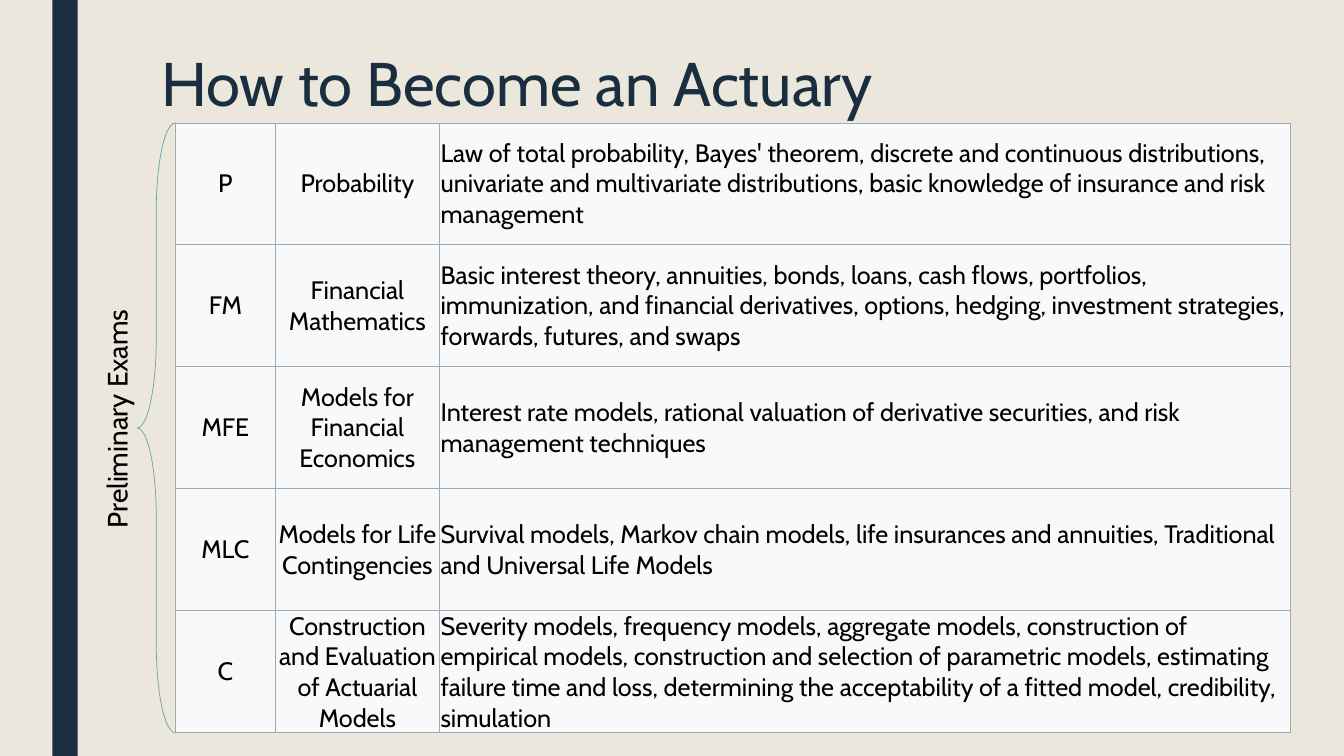
from dataclasses import dataclass

from lxml import etree
from pptx import Presentation
from pptx.dml.color import RGBColor
from pptx.enum.shapes import MSO_SHAPE
from pptx.enum.text import MSO_ANCHOR, PP_ALIGN
from pptx.oxml.ns import qn
from pptx.util import Inches, Pt

RECTANGLE = MSO_SHAPE.RECTANGLE
LEFT_BRACE = MSO_SHAPE.LEFT_BRACE
LEFT, CENTER = PP_ALIGN.LEFT, PP_ALIGN.CENTER
TOP, MIDDLE = MSO_ANCHOR.TOP, MSO_ANCHOR.MIDDLE


@dataclass(frozen=True)
class Theme:
    font: str = "Cabin"
    background: str = "EBE7DD"
    navy: str = "1A2E40"
    black: str = "000000"
    cell: str = "F8F9FA"
    border: str = "A2A9B1"
    brace: str = "69A1AB"
    title_size: int = 44
    label_size: int = 20
    cell_size: int = 18
    border_width: float = 0.75
    brace_width: float = 0.5


THEME = Theme()

TABLE_LEFT, TABLE_TOP = 1.74, 1.22
COLUMN_WIDTHS = (0.99, 1.63, 8.44)
COLUMN_ALIGNMENTS = (CENTER, CENTER, LEFT)
ROW_HEIGHT = 1.21
EXAMS = (
    ("P", "Probability",
     "Law of total probability, Bayes' theorem, discrete and continuous distributions, "
     "univariate and multivariate distributions, basic knowledge of insurance and risk management"),
    ("FM", "Financial Mathematics",
     "Basic interest theory, annuities, bonds, loans, cash flows, portfolios, immunization, "
     "and financial derivatives, options, hedging, investment strategies, forwards, futures, and swaps"),
    ("MFE", "Models for Financial Economics",
     "Interest rate models, rational valuation of derivative securities, and risk management techniques"),
    ("MLC", "Models for Life Contingencies",
     "Survival models, Markov chain models, life insurances and annuities, "
     "Traditional and Universal Life Models"),
    ("C", "Construction and Evaluation of Actuarial Models",
     "Severity models, frequency models, aggregate models, construction of empirical models, "
     "construction and selection of parametric models, estimating failure time and loss, "
     "determining the acceptability of a fitted model, credibility, simulation"),
)
TABLE_HEIGHT = ROW_HEIGHT * len(EXAMS)


def color(value):
    return RGBColor.from_string(value)


def write_text(frame, text, *, size, ink=THEME.black, align=LEFT, spacing=None):
    para = frame.paragraphs[0]
    para.alignment = align
    if spacing:
        para.line_spacing = spacing
    span = para.add_run()
    span.text = text
    span.font.name = THEME.font
    span.font.size = Pt(size)
    span.font.color.rgb = color(ink)


def add_text_box(page, text, left, top, width, height, *, rotation=0, **text_format):
    box = page.shapes.add_textbox(Inches(left), Inches(top), Inches(width), Inches(height))
    box.rotation = rotation
    box.text_frame.word_wrap = True
    box.text_frame.vertical_anchor = TOP
    write_text(box.text_frame, text, **text_format)


def add_side_bar(page):
    bar = page.shapes.add_shape(RECTANGLE, Inches(0.52), 0, Inches(0.25), Inches(7.5))
    bar.shadow.inherit = False
    bar.fill.solid()
    bar.fill.fore_color.rgb = color(THEME.navy)
    bar.line.fill.background()


def add_brace(page):
    width = 0.38
    brace = page.shapes.add_shape(LEFT_BRACE, Inches(TABLE_LEFT - width), Inches(TABLE_TOP),
                                  Inches(width), Inches(TABLE_HEIGHT))
    brace.shadow.inherit = False
    brace.adjustments[0] = 2.315
    brace.adjustments[1] = 0.5
    brace.fill.background()
    brace.line.color.rgb = color(THEME.brace)
    brace.line.width = Pt(THEME.brace_width)


def set_borders(cell):
    properties = cell._tc.get_or_add_tcPr()
    for side in ("a:lnL", "a:lnR", "a:lnT", "a:lnB"):
        line = etree.SubElement(properties, qn(side), w=str(Pt(THEME.border_width)))
        fill = etree.SubElement(line, qn("a:solidFill"))
        etree.SubElement(fill, qn("a:srgbClr"), val=THEME.border)


def format_cell(cell, text, align):
    cell.margin_left = cell.margin_right = Inches(0.01)
    cell.margin_top = cell.margin_bottom = 0
    cell.vertical_anchor = MIDDLE
    set_borders(cell)
    cell.fill.solid()
    cell.fill.fore_color.rgb = color(THEME.cell)
    write_text(cell.text_frame, text, size=THEME.cell_size, align=align)


def add_exam_table(page):
    table = page.shapes.add_table(len(EXAMS), len(COLUMN_WIDTHS), Inches(TABLE_LEFT), Inches(TABLE_TOP),
                                  Inches(sum(COLUMN_WIDTHS)), Inches(TABLE_HEIGHT)).table
    table.first_row = False
    table.horz_banding = False
    for column, width in zip(table.columns, COLUMN_WIDTHS):
        column.width = Inches(width)
    for row, exam in zip(table.rows, EXAMS):
        row.height = Inches(ROW_HEIGHT)
        for cell, text, align in zip(row.cells, exam, COLUMN_ALIGNMENTS):
            format_cell(cell, text, align)


def main():
    deck = Presentation()
    deck.slide_width, deck.slide_height = Inches(13.33), Inches(7.5)
    page = deck.slides.add_slide(deck.slide_layouts[6])
    page.background.fill.solid()
    page.background.fill.fore_color.rgb = color(THEME.background)
    add_side_bar(page)
    add_text_box(page, "How to Become an Actuary", 1.5, 0.49, 10.5, 1.62,
                 size=THEME.title_size, ink=THEME.navy, spacing=0.89)
    add_exam_table(page)
    add_brace(page)
    add_text_box(page, "Preliminary Exams", -0.66, 3.3, 3.64, 0.44,
                 rotation=270, size=THEME.label_size)
    deck.save("out.pptx")


if __name__ == "__main__":
    main()
